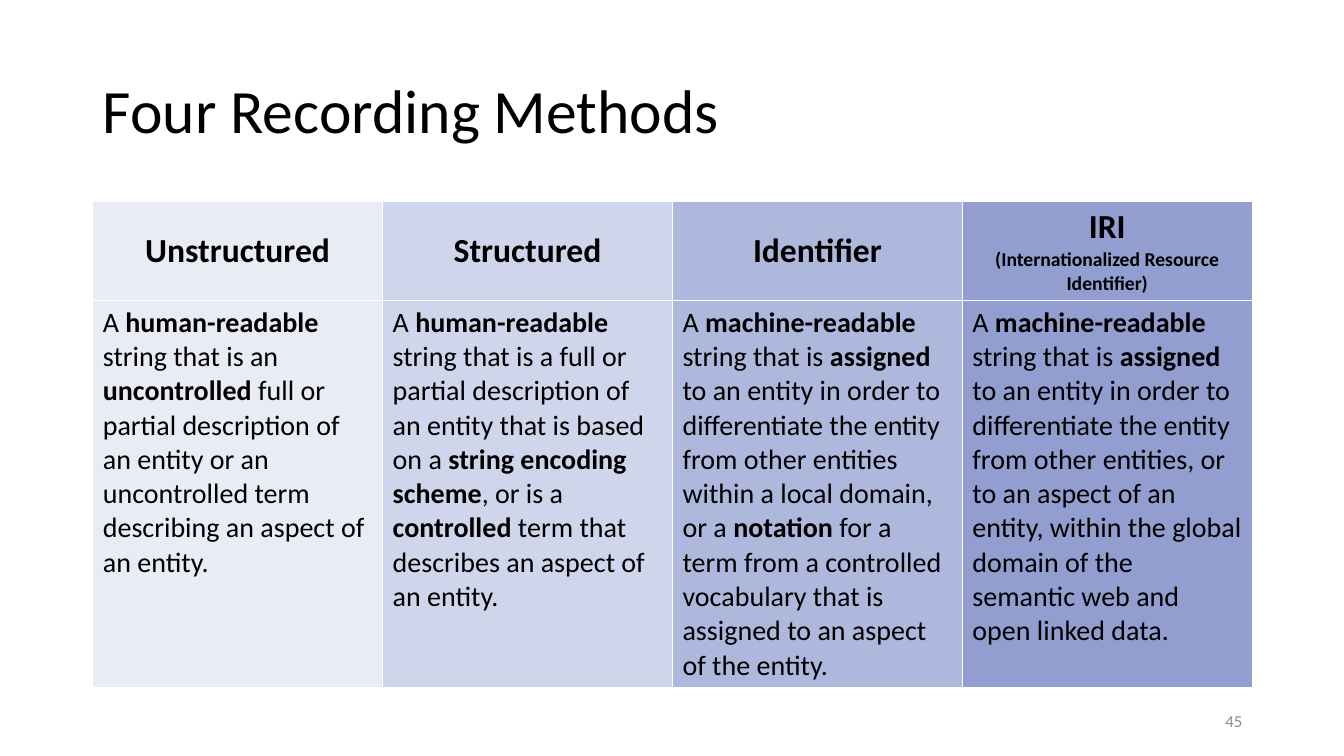
from lxml import etree
from pptx import Presentation
from pptx.dml.color import RGBColor
from pptx.enum.text import MSO_ANCHOR, PP_ALIGN
from pptx.oxml.ns import qn
from pptx.util import Inches, Pt

LEFT, CENTER, RIGHT = PP_ALIGN.LEFT, PP_ALIGN.CENTER, PP_ALIGN.RIGHT
TOP, MIDDLE = MSO_ANCHOR.TOP, MSO_ANCHOR.MIDDLE
TITLE_ONLY = 5
FONT = "Calibri"
COLORS = {"text": "000000", "number": "8C8C8C", "border": "FFFFFF"}

# Content: heading lines, column fill, description with **bold** parts
TITLE = "Four Recording Methods"
PAGE_NUMBER = "45"
METHODS = [
    (["Unstructured"], "E9EBF5",
     "A **human-readable** string that is an **uncontrolled** full or partial "
     "description of an entity or an uncontrolled term describing an aspect "
     "of an entity."),
    (["Structured"], "CFD5EA",
     "A **human-readable **string that is a full or partial description of an "
     "entity that is based on a **string encoding scheme**, or is a "
     "**controlled** term that describes an aspect of an entity."),
    (["Identifier"], "AEB8DC",
     "A **machine-readable **string that is **assigned** to an entity in order "
     "to differentiate the entity from other entities within a local domain, "
     "or a **notation** for a term from a controlled vocabulary that is "
     "assigned to an aspect of the entity."),
    (["IRI", "(Internationalized Resource Identifier)"], "919ECF",
     "A **machine-readable** string that is **assigned** to an entity in order "
     "to differentiate the entity from other entities, or to an aspect of an "
     "entity, within the global domain of the semantic web and open linked "
     "data."),
]
HEADING_SIZES = [24, 14]
BODY_SIZE = 20

# Layout in inches
MARGIN, CONTENT_WIDTH = 0.92, 11.5
TABLE_TOP = 2
ROW_HEIGHTS = [0.97, 3.83]


def add_span(para, text, size, color="text", bold=False):
    span = para.add_run()
    span.text = text
    span.font.name = FONT
    span.font.size = Pt(size)
    span.font.bold = bold
    span.font.color.rgb = RGBColor.from_string(COLORS[color])


def add_borders(cell):
    properties = cell._tc.get_or_add_tcPr()
    for position, side in enumerate(("lnL", "lnR", "lnT", "lnB")):
        line = etree.Element(qn(f"a:{side}"), w=str(Pt(1)))
        fill = etree.SubElement(line, qn("a:solidFill"))
        etree.SubElement(fill, qn("a:srgbClr"), val=COLORS["border"])
        properties.insert(position, line)


def style_cell(cell, fill, anchor):
    cell.fill.solid()
    cell.fill.fore_color.rgb = RGBColor.from_string(fill)
    cell.vertical_anchor = anchor
    add_borders(cell)


deck = Presentation()
deck.slide_width, deck.slide_height = Inches(13.33), Inches(7.5)
page = deck.slides.add_slide(deck.slide_layouts[TITLE_ONLY])

# Title
title = page.shapes.title
title.left, title.top = Inches(MARGIN), Inches(0.4)
title.width, title.height = Inches(CONTENT_WIDTH), Inches(1.45)
title.text_frame.vertical_anchor = MIDDLE
para = title.text_frame.paragraphs[0]
para.alignment = LEFT
para.line_spacing = 0.9
add_span(para, TITLE, 44)

# Table: one column per recording method
table = page.shapes.add_table(
    len(ROW_HEIGHTS), len(METHODS), Inches(MARGIN), Inches(TABLE_TOP),
    Inches(CONTENT_WIDTH), Inches(sum(ROW_HEIGHTS))).table
for row, height in zip(table.rows, ROW_HEIGHTS):
    row.height = Inches(height)

for column, (heading, fill, description) in enumerate(METHODS):
    header, body = table.cell(0, column), table.cell(1, column)
    style_cell(header, fill, MIDDLE)
    style_cell(body, fill, TOP)

    header.text_frame.text = "\n".join([""] * len(heading))
    for para, text, size in zip(header.text_frame.paragraphs, heading, HEADING_SIZES):
        para.alignment = CENTER
        add_span(para, text, size, bold=True)

    para = body.text_frame.paragraphs[0]
    for index, text in enumerate(description.split("**")):
        add_span(para, text, BODY_SIZE, bold=index % 2 == 1)

# Page number
box = page.shapes.add_textbox(Inches(9.42), Inches(6.95), Inches(3), Inches(0.4))
box.text_frame.word_wrap = True
box.text_frame.vertical_anchor = MIDDLE
para = box.text_frame.paragraphs[0]
para.alignment = RIGHT
add_span(para, PAGE_NUMBER, 12, color="number")

deck.save("out.pptx")
